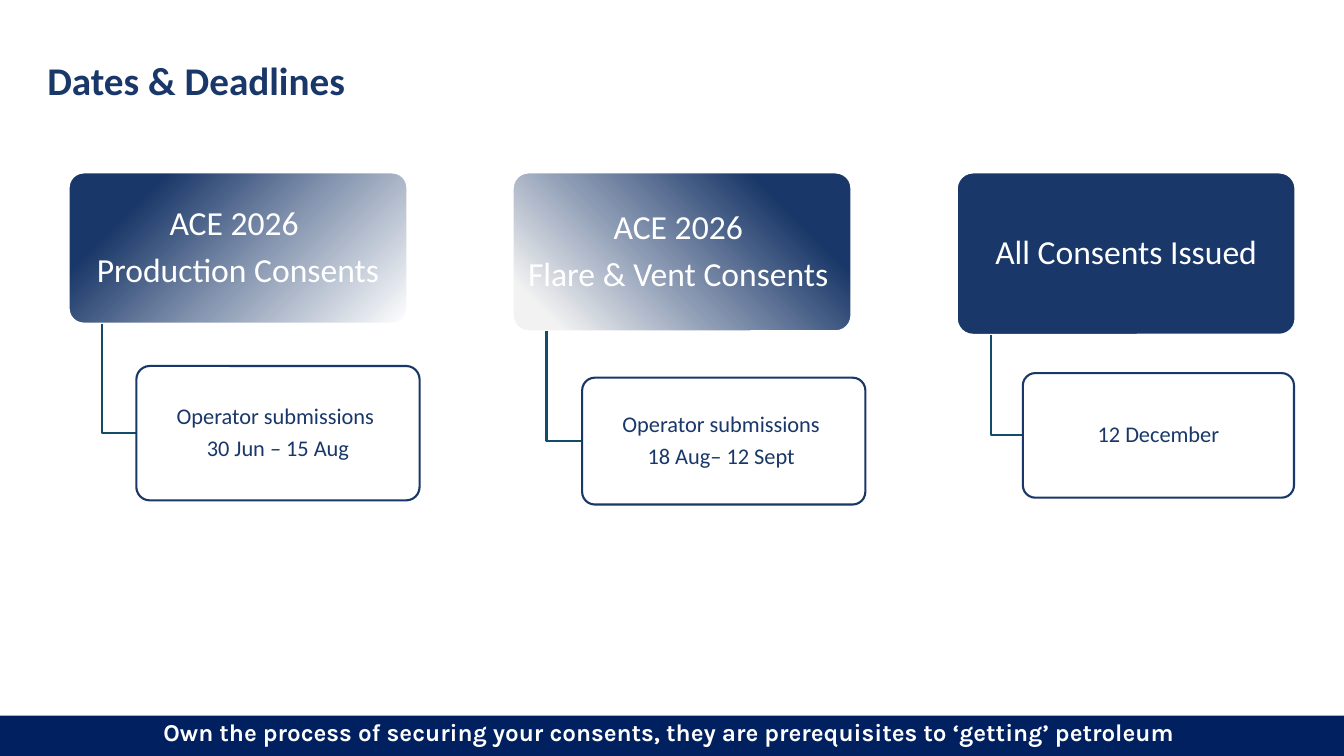
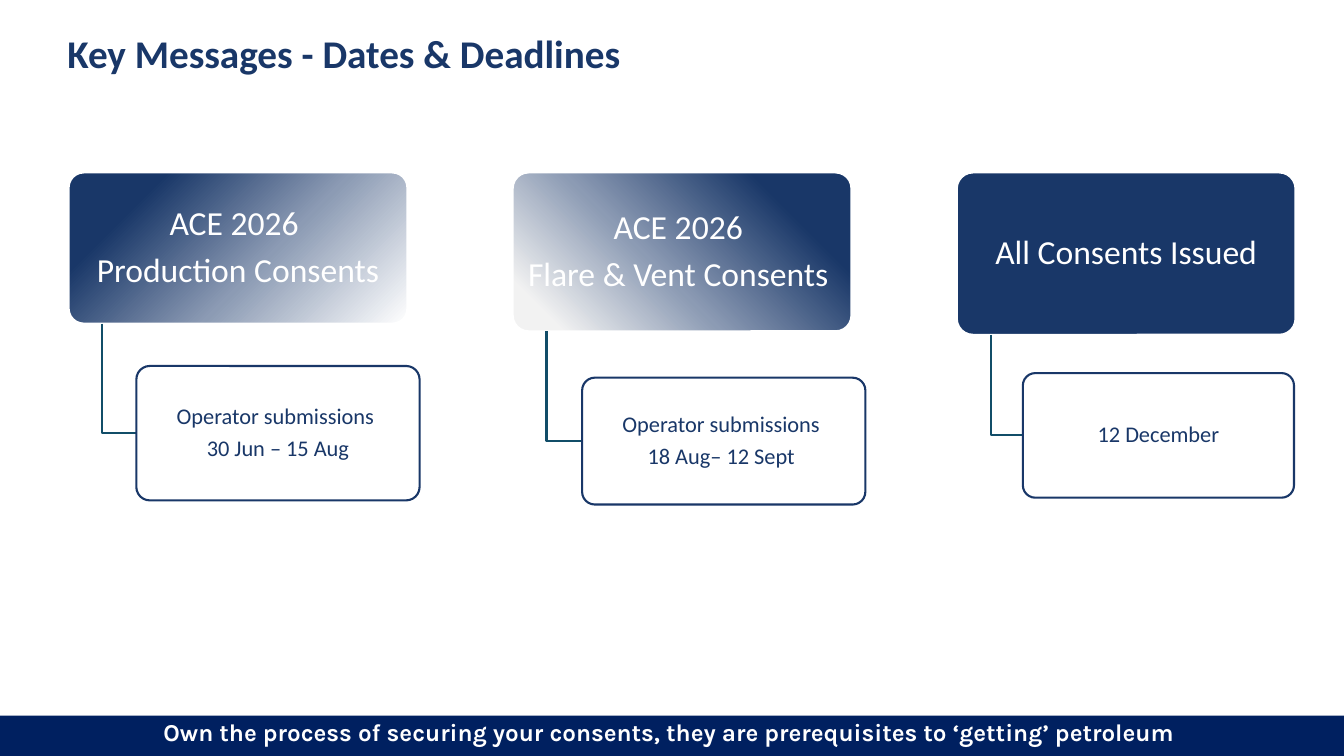
from copy import deepcopy

from pptx import Presentation
from pptx.dml.color import RGBColor
from pptx.enum.shapes import MSO_SHAPE
from pptx.enum.text import MSO_ANCHOR, PP_ALIGN
from pptx.oxml.ns import qn
from pptx.util import Pt

RECT, ROUNDED = MSO_SHAPE.RECTANGLE, MSO_SHAPE.ROUNDED_RECTANGLE
LEFT, CENTER = PP_ALIGN.LEFT, PP_ALIGN.CENTER
TOP, MIDDLE = MSO_ANCHOR.TOP, MSO_ANCHOR.MIDDLE

NAVY = RGBColor(0x19, 0x37, 0x68)
FOOTER_NAVY = RGBColor(0x00, 0x20, 0x60)
TEAL = RGBColor(0x11, 0x4D, 0x68)
SLATE = RGBColor(0x8C, 0x9B, 0xB4)
PALE = RGBColor(0xF2, 0xF2, 0xF2)
WHITE = RGBColor(0xFF, 0xFF, 0xFF)

SLIDE_W, SLIDE_H = 960, 540
FOOTER_H = 28.8
COLUMN_LEFT, COLUMN_STEP = 49, 317.2
HEAD_TOP, HEAD_W = 123.2, 242
STEM_INSET = HEAD_W / 10
LINE_W = 1.5

SLIDES = [
    ("Dates & Deadlines", 33.8, 43.9),
    ("Key Messages - Dates & Deadlines", 48.2, 24.5),
]
FOOTER = "Own the process of securing your consents, they are prerequisites to ‘getting’ petroleum "

COLUMNS = [
    {
        "head": ["ACE 2026 ", "Production Consents"],
        "head_h": 108,
        "stops": [(0.2, NAVY), (0.58, SLATE), (1, WHITE)],
        "angle": 315,
        "detail": ["Operator submissions ", "30 Jun – 15 Aug"],
        "detail_box": (97.4, 261.4, 202.3, 96),
    },
    {
        "head": ["ACE 2026 ", "Flare & Vent Consents "],
        "head_h": 113.5,
        "stops": [(0.1, PALE), (0.42, SLATE), (0.8, NAVY)],
        "angle": 45,
        "detail": ["Operator submissions ", "18 Aug– 12 Sept "],
        "detail_box": (415.8, 269.8, 202.3, 90.6),
    },
    {
        "head": ["All Consents Issued"],
        "head_h": 116,
        "detail": ["12 December"],
        "detail_box": (730.6, 266.5, 193.7, 89),
    },
]


def add_text(sp, lines, size, color, font="Calibri", bold=False, align=CENTER,
             anchor=MIDDLE, insets=(3.6, 2.2, 3.6, 2.2), after=0):
    tf = sp.text_frame
    tf.word_wrap = True
    tf.vertical_anchor = anchor
    tf.margin_left, tf.margin_top, tf.margin_right, tf.margin_bottom = map(Pt, insets)
    for i, line in enumerate(lines):
        p = tf.add_paragraph() if i else tf.paragraphs[0]
        p.alignment = align
        p.line_spacing = 0.9
        p.space_after = Pt(after)
        r = p.add_run()
        r.text = line
        r.font.name = font
        r.font.size = Pt(size)
        r.font.bold = bold
        r.font.color.rgb = color


def add_box(s, kind, box, fill, line=None):
    sp = s.shapes.add_shape(kind, *map(Pt, box))
    sp.shadow.inherit = False
    sp.fill.solid()
    sp.fill.fore_color.rgb = fill
    if kind == ROUNDED:
        sp.adjustments[0] = 0.1
    if line is None:
        sp.line.fill.background()
    else:
        sp.line.color.rgb = line
        sp.line.width = Pt(LINE_W)
    return sp


def set_gradient(sp, stops, angle):
    sp.fill.gradient()
    sp.fill.gradient_angle = angle
    gs_list = sp.element.spPr.find(".//" + qn("a:gsLst"))
    while len(gs_list) < len(stops):
        gs_list.append(deepcopy(gs_list[0]))
    for gs, (position, color) in zip(sp.fill.gradient_stops, stops):
        gs.color.rgb = color
        gs.position = position


def add_elbow(s, x, top, end_x, end_y):
    builder = s.shapes.build_freeform(Pt(x), Pt(top))
    builder.add_line_segments([(Pt(x), Pt(end_y)), (Pt(end_x), Pt(end_y))], close=False)
    sp = builder.convert_to_shape()
    sp.shadow.inherit = False
    sp.fill.background()
    sp.line.color.rgb = TEAL
    sp.line.width = Pt(LINE_W)


def add_column(s, x, column):
    head = add_box(s, ROUNDED, (x, HEAD_TOP, HEAD_W, column["head_h"]), NAVY, WHITE)
    if "stops" in column:
        set_gradient(head, column["stops"], column["angle"])
    add_text(head, column["head"], 24, WHITE, after=8)

    left, top, _, height = column["detail_box"]
    add_elbow(s, x + STEM_INSET, HEAD_TOP + column["head_h"], left, top + height / 2)
    detail = add_box(s, ROUNDED, column["detail_box"], WHITE, NAVY)
    add_text(detail, column["detail"], 16, NAVY, insets=(2.2, 1.4, 2.2, 1.4), after=5.5)


def add_slide(prs, title, x, y):
    s = prs.slides.add_slide(prs.slide_layouts[6])
    title_box = s.shapes.add_textbox(Pt(x), Pt(y), Pt(558.7), Pt(39.6))
    add_text(title_box, [title], 28, NAVY, bold=True, align=LEFT, anchor=TOP,
             insets=(0, 0, 7.2, 3.6))
    for i, column in enumerate(COLUMNS):
        add_column(s, COLUMN_LEFT + i * COLUMN_STEP, column)
    footer = add_box(s, RECT, (0, SLIDE_H - FOOTER_H, SLIDE_W, FOOTER_H), FOOTER_NAVY)
    add_text(footer, [FOOTER], 17.3, WHITE, font="Karla", bold=True, anchor=TOP,
             insets=(7.2, 3.6, 7.2, 3.6))


def main():
    prs = Presentation()
    prs.slide_width, prs.slide_height = Pt(SLIDE_W), Pt(SLIDE_H)
    for title, x, y in SLIDES:
        add_slide(prs, title, x, y)
    prs.save("out.pptx")


if __name__ == "__main__":
    main()
